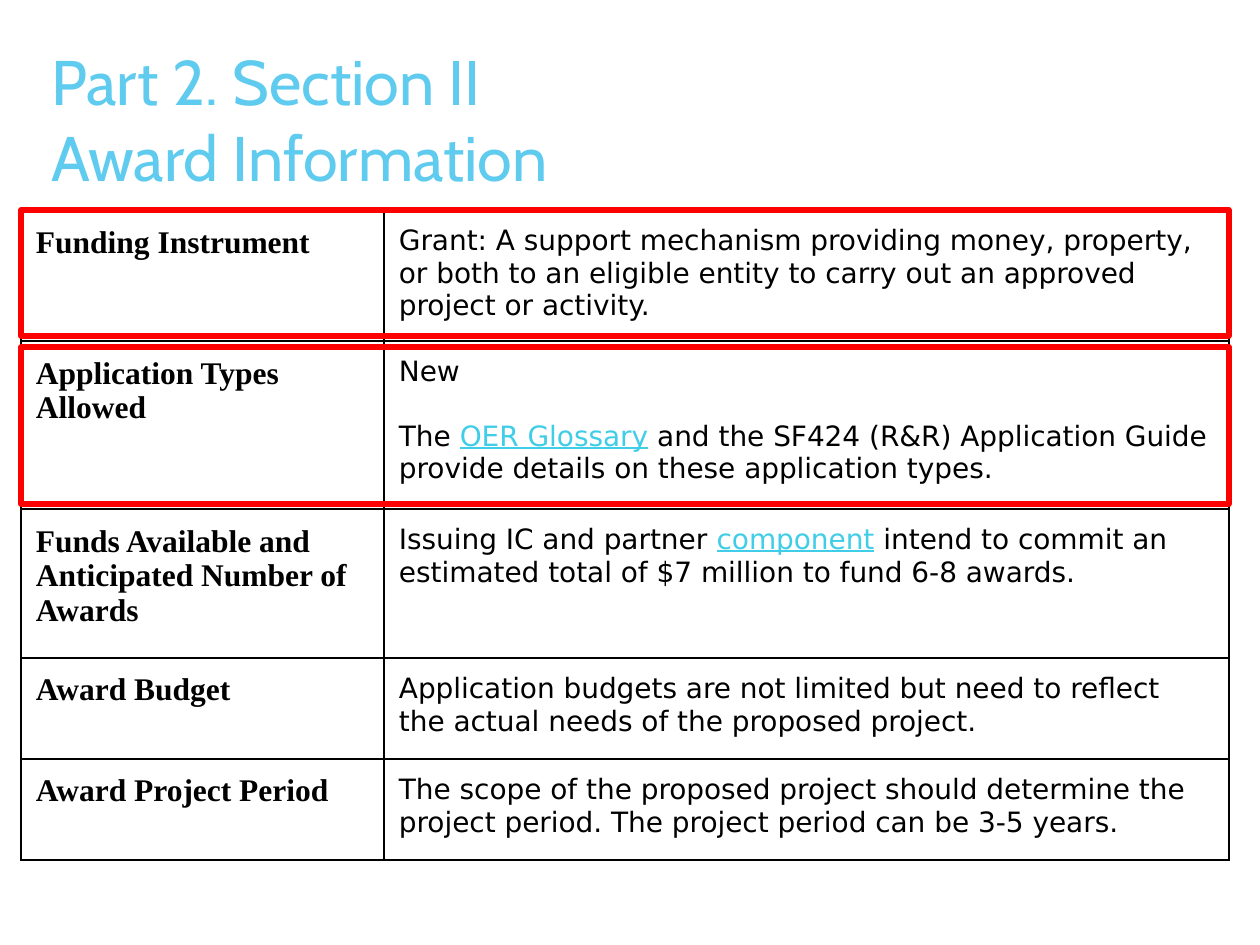
from lxml.etree import SubElement
from pptx import Presentation
from pptx.dml.color import RGBColor
from pptx.enum.shapes import MSO_SHAPE
from pptx.enum.text import MSO_ANCHOR, MSO_AUTO_SIZE, PP_ALIGN
from pptx.oxml.ns import qn
from pptx.util import Emu, Pt

SKY = RGBColor(0x5F, 0xCB, 0xEF)
LINK = RGBColor(0x3F, 0xCD, 0xE7)
BLACK = RGBColor(0, 0, 0)
RED = RGBColor(0xFF, 0, 0)

COLUMN_WIDTHS = [363, 845]
TABLE_LEFT, TABLE_TOP, TABLE_WIDTH = 21, 210, sum(COLUMN_WIDTHS)
CELL_INSET = 15

AWARD_ROWS = [
    (131, "Funding Instrument",
     ["Grant: A support mechanism providing money, property, or both to an "
      "eligible entity to carry out an approved project or activity."]),
    (168, "Application Types Allowed",
     ["New",
      "The |OER Glossary| and the SF424 (R&R) Application Guide provide "
      "details on these application types."]),
    (149, "Funds Available and Anticipated Number of Awards",
     ["Issuing IC and partner |component| intend to commit an estimated "
      "total of $7 million to fund 6-8 awards."]),
    (101, "Award Budget",
     ["Application budgets are not limited but need to reflect the actual "
      "needs of the proposed project."]),
    (101, "Award Project Period",
     ["The scope of the proposed project should determine the project "
      "period. The project period can be 3-5 years."]),
]
HIGHLIGHTS = [(210, 126), (347, 157)]


def px(length):
    return Emu(round(length * 914400 / 126))


def write(frame, paragraphs, font, size, color=BLACK, bold=False, gap=0):
    for index, text in enumerate(paragraphs):
        paragraph = frame.add_paragraph() if index else frame.paragraphs[0]
        paragraph.alignment = PP_ALIGN.LEFT
        paragraph.space_before = Pt(gap if index else 0)
        for part, words in enumerate(text.split("|")):
            linked = part % 2 == 1
            for line, wording in enumerate(words.split("\n")):
                if line:
                    paragraph.add_line_break()
                run = paragraph.add_run()
                run.text = wording
                run.font.name = font
                run.font.size = Pt(size)
                run.font.bold = bold
                run.font.underline = linked
                run.font.color.rgb = LINK if linked else color


def add_title(slide, text):
    title = slide.shapes.title
    title.left, title.top = px(39), px(28)
    title.width, title.height = px(874), px(181)
    frame = title.text_frame
    frame.word_wrap = True
    frame.auto_size = MSO_AUTO_SIZE.NONE
    frame.vertical_anchor = MSO_ANCHOR.MIDDLE
    write(frame, [text], font="Cabin", size=36, color=SKY)


def format_cell(cell):
    properties = cell._tc.get_or_add_tcPr()
    for side in ("a:lnL", "a:lnR", "a:lnT", "a:lnB"):
        border = SubElement(properties, qn(side), w=str(Pt(1)))
        fill = SubElement(border, qn("a:solidFill"))
        SubElement(fill, qn("a:srgbClr"), val=str(BLACK))
    cell.fill.background()
    cell.margin_left = cell.margin_right = px(CELL_INSET)
    cell.margin_top = cell.margin_bottom = px(CELL_INSET)
    cell.vertical_anchor = MSO_ANCHOR.TOP


def add_award_table(slide):
    total_height = sum(height for height, _, _ in AWARD_ROWS)
    table = slide.shapes.add_table(
        len(AWARD_ROWS), len(COLUMN_WIDTHS), px(TABLE_LEFT), px(TABLE_TOP),
        px(TABLE_WIDTH), px(total_height)).table
    table.first_row = table.horz_banding = False
    for column, width in zip(table.columns, COLUMN_WIDTHS):
        column.width = px(width)
    for row, (height, label, details) in zip(table.rows, AWARD_ROWS):
        row.height = px(height)
        label_cell, detail_cell = row.cells
        format_cell(label_cell)
        format_cell(detail_cell)
        write(label_cell.text_frame, [label], font="Times New Roman", size=18,
              bold=True)
        write(detail_cell.text_frame, details, font="DejaVu Sans", size=16,
              gap=18.5)


def add_highlight(slide, top, height):
    highlight = slide.shapes.add_shape(
        MSO_SHAPE.RECTANGLE, px(TABLE_LEFT), px(top), px(TABLE_WIDTH),
        px(height))
    highlight.shadow.inherit = False
    highlight.fill.background()
    highlight.line.color.rgb = RED
    highlight.line.width = Pt(3)


def main():
    presentation = Presentation()
    presentation.slide_width, presentation.slide_height = px(1260), px(945)
    slide = presentation.slides.add_slide(presentation.slide_layouts[5])
    add_title(slide, "Part 2. Section II\nAward Information")
    add_award_table(slide)
    for top, height in HIGHLIGHTS:
        add_highlight(slide, top, height)
    presentation.save("out.pptx")


if __name__ == "__main__":
    main()
